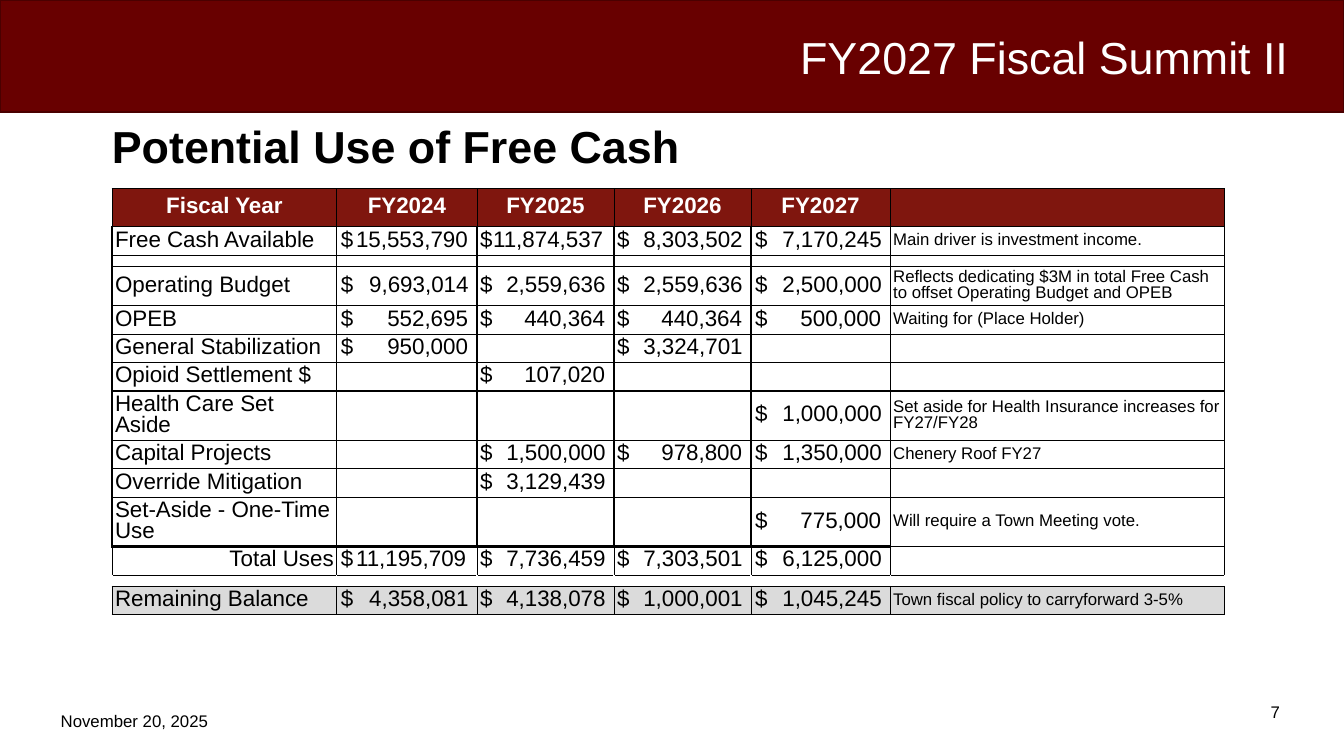
import lxml.etree
import pptx
import pptx.dml.color
import pptx.enum.shapes
import pptx.enum.text
import pptx.oxml.ns
import pptx.util

Pt = pptx.util.Pt
RGBColor = pptx.dml.color.RGBColor
ALIGN = pptx.enum.text.PP_ALIGN
ANCHOR = pptx.enum.text.MSO_ANCHOR
qn = pptx.oxml.ns.qn

BANNER = RGBColor(0x68, 0x00, 0x00)
BANNER_EDGE = RGBColor(0x4A, 0x00, 0x00)
HEADER = RGBColor(0x7F, 0x16, 0x0E)
BALANCE = RGBColor(0xDB, 0xDB, 0xDB)
WHITE = RGBColor(0xFF, 0xFF, 0xFF)
BLACK = RGBColor(0x00, 0x00, 0x00)

COLUMN_WIDTHS = [160.6, 100.1, 97.9, 97.9, 99.4, 239]
AMOUNT_ENDS = [96.5, 95, 95, 95.8]  # tab stop after the amount, per year
AMOUNT_WIDTHS = {10: 85.7, 9: 76.3, 7: 63.4}  # by number of characters
LINE, SPACER = 20.3, 8

# Row height, then label, four years and comment
ROWS = [
    (27.4, ["Fiscal Year", "FY2024", "FY2025", "FY2026", "FY2027", ""]),
    (LINE, ["Free Cash Available", "15,553,790", "11,874,537", "8,303,502", "7,170,245",
            "Main driver is investment income."]),
    (SPACER, [""] * 6),
    (28.1, ["Operating Budget", "9,693,014", "2,559,636", "2,559,636", "2,500,000",
            "Reflects dedicating $3M in total Free Cash to offset Operating Budget and OPEB"]),
    (LINE, ["OPEB", "552,695", "440,364", "440,364", "500,000", "Waiting for (Place Holder)"]),
    (LINE, ["General Stabilization", "950,000", "", "3,324,701", "", ""]),
    (LINE, ["Opioid Settlement $", "", "107,020", "", "", ""]),
    (35.3, ["Health Care Set Aside", "", "", "", "1,000,000",
            "Set aside for Health Insurance increases for FY27/FY28"]),
    (LINE, ["Capital Projects", "", "1,500,000", "978,800", "1,350,000", "Chenery Roof FY27"]),
    (LINE, ["Override Mitigation", "", "3,129,439", "", "", ""]),
    (35.3, ["Set-Aside - One-Time Use", "", "", "", "775,000",
            "Will require a Town Meeting vote."]),
    (LINE, ["Total Uses", "11,195,709", "7,736,459", "7,303,501", "6,125,000", ""]),
    (SPACER, [""] * 6),
    (LINE, ["Remaining Balance", "4,358,081", "4,138,078", "1,000,001", "1,045,245",
            "Town fiscal policy to carryforward 3-5%"]),
]
HEADER_ROW, SET_ASIDE_ROW, TOTAL_ROW, GAP_ROW, BALANCE_ROW = 0, 10, 11, 12, 13
COMMENT_COLUMN = 5


def set_attributes(target, values):
    for name, value in values.items():
        setattr(target, name, value)


def write_text(frame, text, size, color=BLACK, bold=False, **paragraph_format):
    paragraph = frame.paragraphs[0]
    set_attributes(paragraph, paragraph_format)
    run = paragraph.add_run()
    run.text = text
    set_attributes(run.font, {"name": "Arial", "size": Pt(size), "bold": bold})
    run.font.color.rgb = color


def add_label(slide, box, text, size, **formatting):
    shape = slide.shapes.add_textbox(*map(Pt, box))
    set_attributes(shape.text_frame, {
        "word_wrap": True, "margin_left": Pt(7.2), "margin_right": Pt(7.2),
        "margin_top": Pt(4.3), "margin_bottom": Pt(7.2)})
    write_text(shape.text_frame, text, size, **formatting)


def add_banner(slide, left, top, width, height):
    banner = slide.shapes.add_shape(
        pptx.enum.shapes.MSO_SHAPE.RECTANGLE, *map(Pt, (left, top, width, height)))
    banner.shadow.inherit = False
    banner.fill.solid()
    banner.fill.fore_color.rgb = BANNER
    banner.line.color.rgb = BANNER_EDGE
    banner.line.width = Pt(1)
    add_label(slide, (left + 564.5, top + 22.3, 377.3, 42.5), "FY2027 Fiscal Summit II", 32,
              color=WHITE, line_spacing=0.87)


def add_title(slide, left, top, width, height):
    title = slide.shapes.title
    set_attributes(title, {"left": Pt(left), "top": Pt(top),
                           "width": Pt(width), "height": Pt(height)})
    set_attributes(title.text_frame, {
        "word_wrap": True, "auto_size": pptx.enum.text.MSO_AUTO_SIZE.NONE,
        "vertical_anchor": ANCHOR.MIDDLE, "margin_left": Pt(7.2), "margin_right": Pt(7.2),
        "margin_top": Pt(2.2), "margin_bottom": Pt(3.6)})
    write_text(title.text_frame, "Potential Use of Free Cash", 32, bold=True,
               alignment=ALIGN.LEFT, line_spacing=0.87)


def add_footer(slide, left, top, width, height):
    add_label(slide, (left, top + 6.5, 141.8, height), "November 20, 2025", 12,
              alignment=ALIGN.CENTER)
    add_label(slide, (left + width - 53.3, top, 53.3, height), "7", 12, alignment=ALIGN.CENTER)


def border_rules(row, column):
    """Width and colour of the left, right, top and bottom borders."""
    sides, top, bottom, side_color = 1, 1, 1, BLACK
    if row in (HEADER_ROW, TOTAL_ROW, GAP_ROW, BALANCE_ROW):
        sides, top, bottom = 0.5, 0.5, 0.5
    if row == HEADER_ROW:
        bottom = 1
    elif row == SET_ASIDE_ROW and column != COMMENT_COLUMN:
        bottom = 3
    elif row == TOTAL_ROW:
        top = 1 if column == COMMENT_COLUMN else 3
    elif row == GAP_ROW:
        sides, side_color = 1, WHITE
    return {"a:lnL": (sides, side_color), "a:lnR": (sides, side_color),
            "a:lnT": (top, BLACK), "a:lnB": (bottom, BLACK)}


def set_borders(cell, rules):
    properties = cell._tc.get_or_add_tcPr()
    for tag, (width, color) in rules.items():
        line = lxml.etree.SubElement(properties, qn(tag), w=str(Pt(width)))
        fill = lxml.etree.SubElement(line, qn("a:solidFill"))
        lxml.etree.SubElement(fill, qn("a:srgbClr"), val=str(color))


def add_tabs(paragraph, positions):
    tabs = lxml.etree.SubElement(paragraph._p.get_or_add_pPr(), qn("a:tabLst"))
    for position in positions:
        lxml.etree.SubElement(tabs, qn("a:tab"), pos=str(Pt(position)), algn="l")


def fill_cell(cell, row, column, text):
    is_amount = row != HEADER_ROW and 0 < column < COMMENT_COLUMN
    set_borders(cell, border_rules(row, column))
    cell.fill.solid()
    cell.fill.fore_color.rgb = {HEADER_ROW: HEADER, BALANCE_ROW: BALANCE}.get(row, WHITE)
    set_attributes(cell, {
        "vertical_anchor": ANCHOR.MIDDLE, "margin_top": 0, "margin_bottom": 0,
        "margin_left": 0 if is_amount else Pt(2.2),
        "margin_right": Pt(0.7) if is_amount or column == COMMENT_COLUMN else Pt(2.2)})
    frame = cell.text_frame
    if not text:
        lxml.etree.SubElement(frame.paragraphs[0]._p, qn("a:endParaRPr"), sz="400")
    elif row == HEADER_ROW:
        write_text(frame, text, 16, WHITE, True, alignment=ALIGN.CENTER, line_spacing=0.83)
    elif is_amount:
        end = AMOUNT_ENDS[column - 1]
        write_text(frame, f"$\t{text}\t", 16, alignment=ALIGN.RIGHT, line_spacing=0.83)
        add_tabs(frame.paragraphs[0], [end - AMOUNT_WIDTHS[len(text)], end])
    else:
        write_text(frame, text, 12 if column == COMMENT_COLUMN else 16, line_spacing=0.83,
                   alignment=ALIGN.RIGHT if row == TOTAL_ROW else ALIGN.LEFT)


def add_cash_table(slide, left, top, width, height):
    table = slide.shapes.add_table(
        len(ROWS), len(COLUMN_WIDTHS), *map(Pt, (left, top, width, height))).table
    set_attributes(table, {"first_row": False, "horz_banding": False})
    for column, column_width in zip(table.columns, COLUMN_WIDTHS):
        column.width = Pt(column_width)
    for row, (row_height, texts) in enumerate(ROWS):
        table.rows[row].height = Pt(row_height)
        for column, text in enumerate(texts):
            fill_cell(table.cell(row, column), row, column, text)


def main():
    presentation = pptx.Presentation()
    set_attributes(presentation, {"slide_width": Pt(960), "slide_height": Pt(540)})
    slide = presentation.slides.add_slide(presentation.slide_layouts[5])
    # Banner and footer
    add_banner(slide, 0, 0, 960, 80)
    add_footer(slide, 25.2, 496.8, 912.3, 25.2)
    # Title and table
    add_title(slide, 72.7, 80, 767.5, 54.7)
    add_cash_table(slide, 80, 134.6, sum(COLUMN_WIDTHS), sum(height for height, _ in ROWS))
    presentation.save("out.pptx")


if __name__ == "__main__":
    main()
